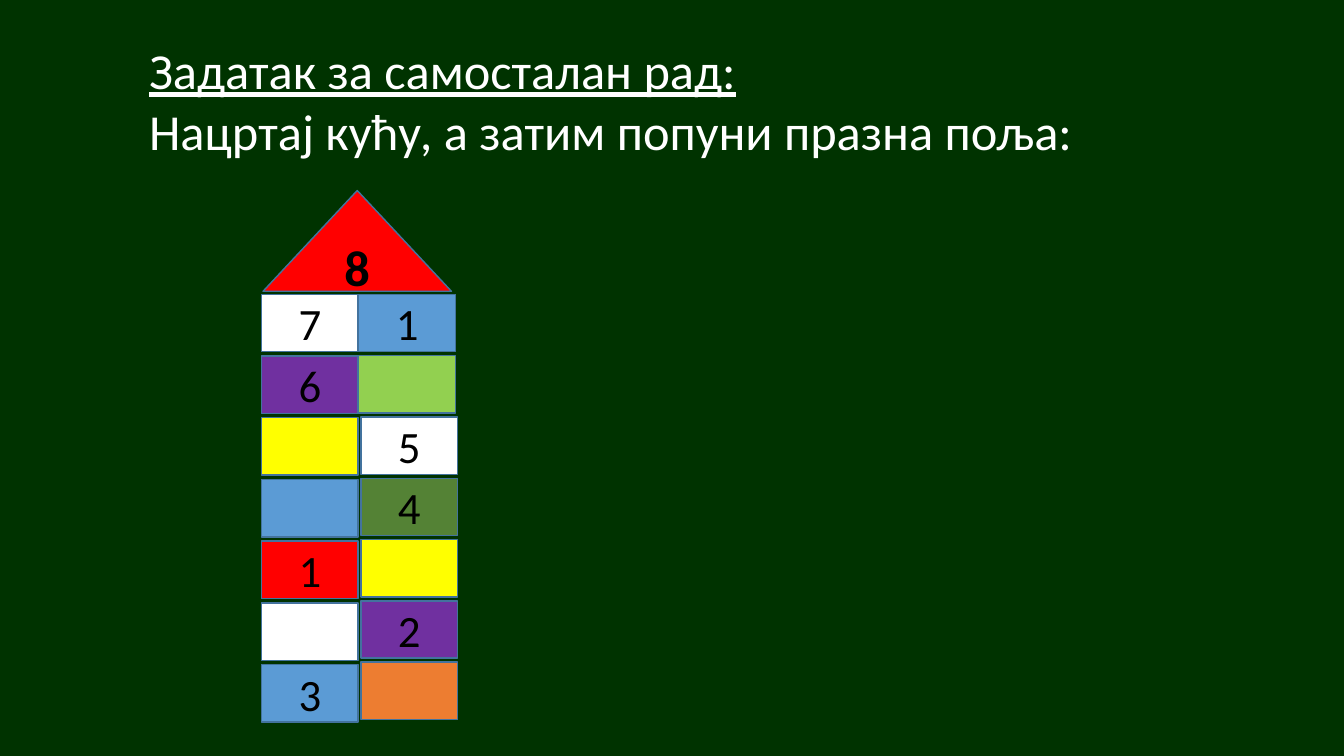
"""Builds the number-house exercise slide."""
import pptx
import pptx.dml.color
import pptx.enum.shapes
import pptx.enum.text
import pptx.util

Pt = pptx.util.Pt
SHAPES = pptx.enum.shapes.MSO_SHAPE
ALIGN = pptx.enum.text.PP_ALIGN
ANCHOR = pptx.enum.text.MSO_ANCHOR


def color(value):
    return pptx.dml.color.RGBColor.from_string(value)


class Painter:
    font = "Calibri"
    outline = "43739E"

    def __init__(self, page, background):
        self.page = page
        page.background.fill.solid()
        page.background.fill.fore_color.rgb = color(background)

    def style(self, para, size, ink, bold=False, underline=False):
        for span in para.runs:
            span.font.name = self.font
            span.font.size = Pt(size)
            span.font.color.rgb = color(ink)
            span.font.bold = bold
            span.font.underline = underline

    def heading(self, left, top, width, height, lines):
        box = self.page.shapes.add_textbox(Pt(left), Pt(top), Pt(width), Pt(height))
        frame = box.text_frame
        frame.word_wrap = False
        frame.auto_size = pptx.enum.text.MSO_AUTO_SIZE.SHAPE_TO_FIT_TEXT
        frame.text = "\n".join(lines)
        for index, para in enumerate(frame.paragraphs):
            self.style(para, 36, "FFFFFF", underline=index == 0)

    def block(self, kind, left, top, width, height, fill, text, size, bold=False):
        shape = self.page.shapes.add_shape(kind, Pt(left), Pt(top), Pt(width), Pt(height))
        shape.shadow.inherit = False
        shape.fill.solid()
        shape.fill.fore_color.rgb = color(fill)
        shape.line.color.rgb = color(self.outline)
        shape.line.width = Pt(1)
        if text:
            frame = shape.text_frame
            frame.text = text
            frame.vertical_anchor = ANCHOR.MIDDLE
            para = frame.paragraphs[0]
            para.alignment = ALIGN.CENTER
            self.style(para, size, "000000", bold)


def main():
    deck = pptx.Presentation()
    deck.slide_width, deck.slide_height = Pt(960), Pt(540)
    painter = Painter(deck.slides.add_slide(deck.slide_layouts[6]), "003300")

    painter.heading(99.4, 24.5, 680.4, 94.3, [
        "Задатак за самосталан рад:",
        "Нацртај кућу, а затим попуни празна поља:",
    ])
    painter.block(SHAPES.ISOSCELES_TRIANGLE, 187.9, 136.1, 134.6, 72, "FF0000", "8", 36, True)

    floors = [
        (("7", "FFFFFF"), ("1", "5B9BD5")),
        (("6", "7030A0"), ("", "92D050")),
        (("", "FFFF00"), ("5", "FFFFFF")),
        (("", "5B9BD5"), ("4", "548235")),
        (("1", "FF0000"), ("", "FFFF00")),
        (("", "FFFFFF"), ("2", "7030A0")),
        (("3", "5B9BD5"), ("", "ED7D31")),
    ]
    pitches = (44.1, 43.8)
    for row, floor in enumerate(floors):
        lefts = (186.8, 256.3 if row < 2 else 257.8)
        for (number, fill), left, pitch in zip(floor, lefts, pitches):
            top = 210.2 + row * pitch
            painter.block(SHAPES.RECTANGLE, left, top, 69.1, 41, fill, number, 32)

    deck.save("out.pptx")


if __name__ == "__main__":
    main()
